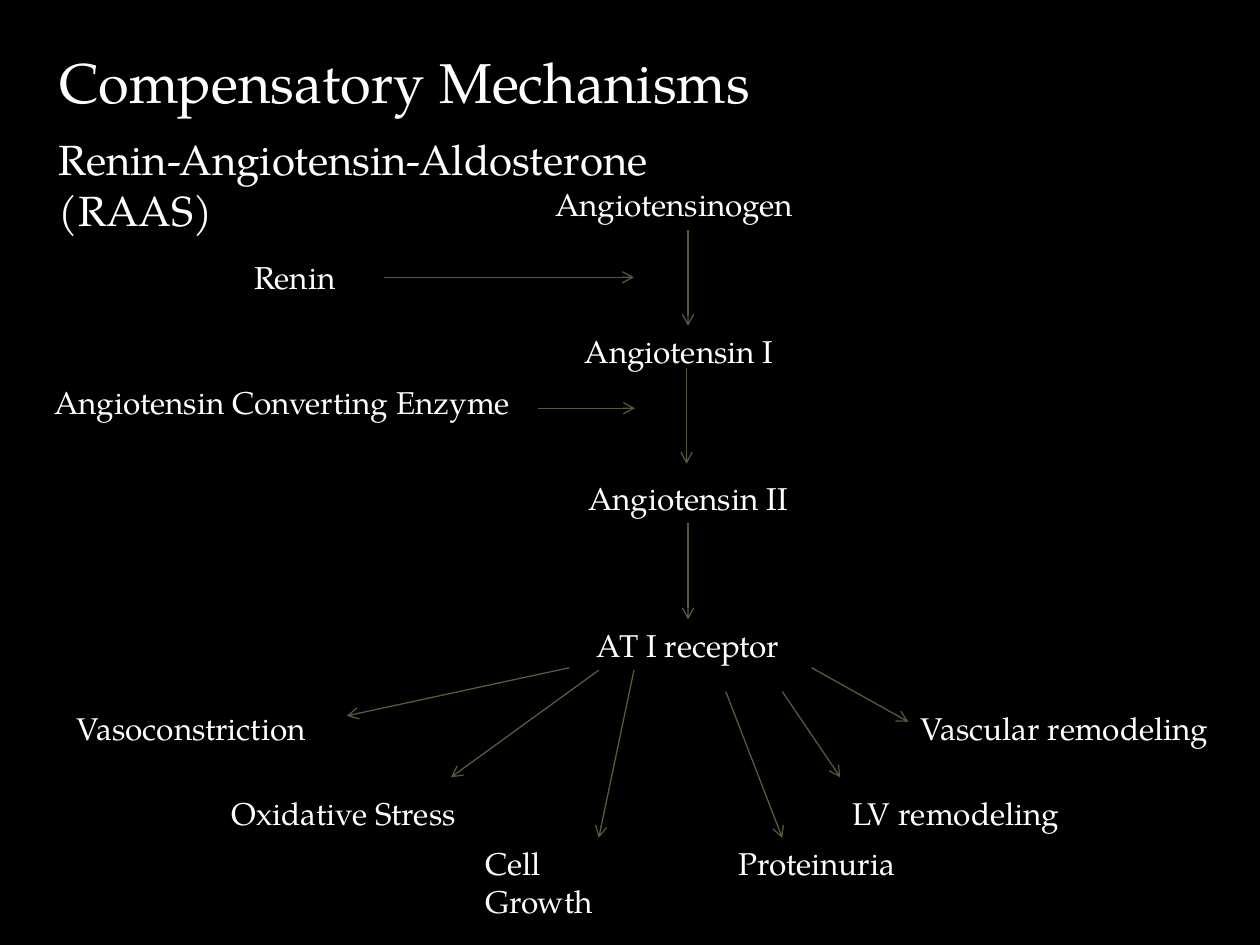
from lxml import etree
from pptx import Presentation
from pptx.dml.color import RGBColor
from pptx.enum.shapes import MSO_CONNECTOR
from pptx.enum.text import MSO_ANCHOR, MSO_AUTO_SIZE, PP_ALIGN
from pptx.oxml.ns import qn
from pptx.util import Cm, Pt

BLACK = RGBColor(0, 0, 0)
WHITE = RGBColor(0xFF, 0xFF, 0xFF)
OLIVE = RGBColor(0x4F, 0x5E, 0x3C)
FONT = "TeX Gyre Pagella"
STRAIGHT = MSO_CONNECTOR.STRAIGHT
LEFT, CENTER = PP_ALIGN.LEFT, PP_ALIGN.CENTER
TOP, BOTTOM = 0, 2  # connection sites

LABEL_H = 1.02
AXIS_X, STEP_W = 13.87, 7.42
STEP_TOP, STEP_PITCH = 3.61, 2.96

# Cascade: text, extra right inset that nudges the words left
STEPS = [("Angiotensinogen", 0.56), ("Angiotensin I", 0.36),
         ("Angiotensin II", 0), ("AT I receptor", 0)]
# Text, left, top, width, then arrow x1, y1, x2, y2
ENZYMES = [
    ("Renin", 4.88, 5.08, 5.74, (7.75, 5.59, 12.78, 5.59)),
    ("Angiotensin Converting Enzyme", 0.84, 7.59, 9.9, (10.85, 8.23, 12.8, 8.23)),
]
EFFECTS = [
    ("Vasoconstriction", 1.3, 14.17, 5.3, (11.48, 13.46, 6.99, 14.43)),
    ("Oxidative Stress", 4.42, 15.88, 5.15, (12.07, 13.51, 9.09, 15.67)),
    ("Cell Growth", 9.53, 16.89, 3.4, (12.78, 13.51, 12.07, 16.89)),
    ("Proteinuria", 14.63, 16.89, 3.8, (14.63, 13.94, 15.77, 16.89)),
    ("LV remodeling", 16.94, 15.88, 4.75, (15.77, 13.94, 16.94, 15.67)),
    ("Vascular remodeling", 18.31, 14.17, 6.45, (16.36, 13.46, 18.31, 14.55)),
]


def write(sp, text, size=18, align=LEFT, inset_right=0.0):
    tf = sp.text_frame
    tf.word_wrap = True
    tf.auto_size = MSO_AUTO_SIZE.NONE
    tf.vertical_anchor = MSO_ANCHOR.TOP
    tf.margin_right = Cm(0.25 + inset_right)
    p = tf.paragraphs[0]
    p.alignment = align
    r = p.add_run()
    r.text = text
    r.font.name = FONT
    r.font.size = Pt(size)
    r.font.color.rgb = WHITE


def add_label(s, text, x, y, w, h=LABEL_H, **fmt):
    sp = s.shapes.add_textbox(Cm(x), Cm(y), Cm(w), Cm(h))
    write(sp, text, **fmt)
    return sp


def add_title(s, text):
    sp = s.shapes.title
    sp.left, sp.top, sp.width, sp.height = Cm(0.94), Cm(0.84), Cm(14.83), Cm(1.63)
    write(sp, text, size=32)


def add_arrow(s, x1, y1, x2, y2):
    c = s.shapes.add_connector(STRAIGHT, Cm(x1), Cm(y1), Cm(x2), Cm(y2))
    c.line.color.rgb = OLIVE
    c.line.width = Pt(0.75)
    etree.SubElement(c.line._get_or_add_ln(), qn("a:tailEnd"), type="arrow")
    etree.SubElement(c._element.spPr, qn("a:effectLst"))
    return c


def join(s, upper, lower):
    c = add_arrow(s, 0, 0, 1, 1)
    c.begin_connect(upper, BOTTOM)
    c.end_connect(lower, TOP)


def add_cascade(s):
    boxes = [add_label(s, text, AXIS_X - STEP_W / 2, STEP_TOP + i * STEP_PITCH,
                       STEP_W, align=CENTER, inset_right=inset)
             for i, (text, inset) in enumerate(STEPS)]
    join(s, boxes[0], boxes[1])
    add_arrow(s, 13.84, 7.42, 13.84, 9.35)  # starts close under the words
    join(s, boxes[2], boxes[3])


def main():
    prs = Presentation()
    prs.slide_width, prs.slide_height = Cm(25.4), Cm(19.05)
    s = prs.slides.add_slide(prs.slide_layouts[5])
    s.background.fill.solid()
    s.background.fill.fore_color.rgb = BLACK

    # Headings
    add_title(s, "Compensatory Mechanisms")
    add_label(s, "Renin-Angiotensin-Aldosterone (RAAS)", 0.94, 2.57, 15, 1.27, size=24)

    # Cascade, then the enzymes acting on it and its effects
    add_cascade(s)
    for text, x, y, w, arrow in ENZYMES + EFFECTS:
        add_label(s, text, x, y, w)
        add_arrow(s, *arrow)

    prs.save("out.pptx")


if __name__ == "__main__":
    main()
